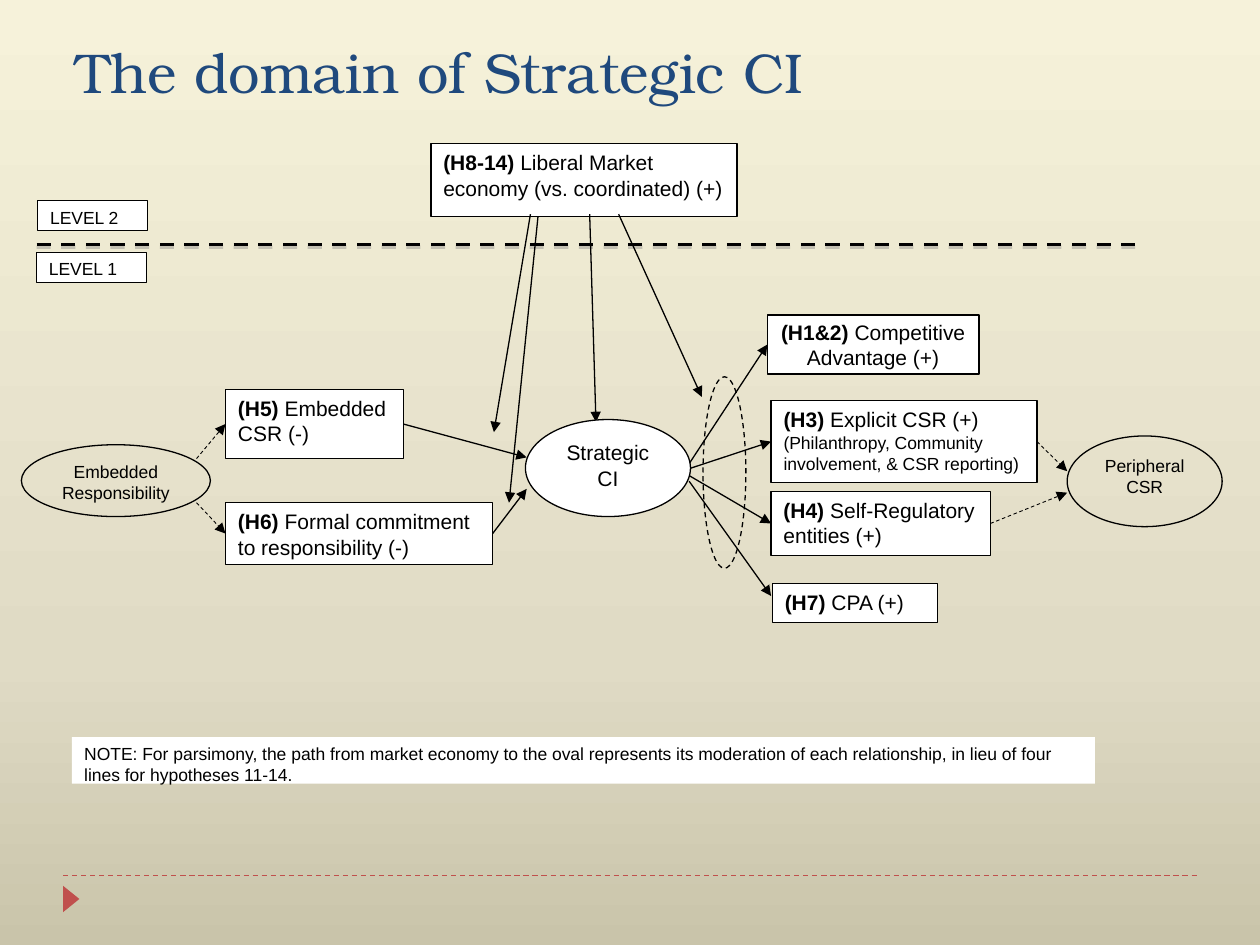
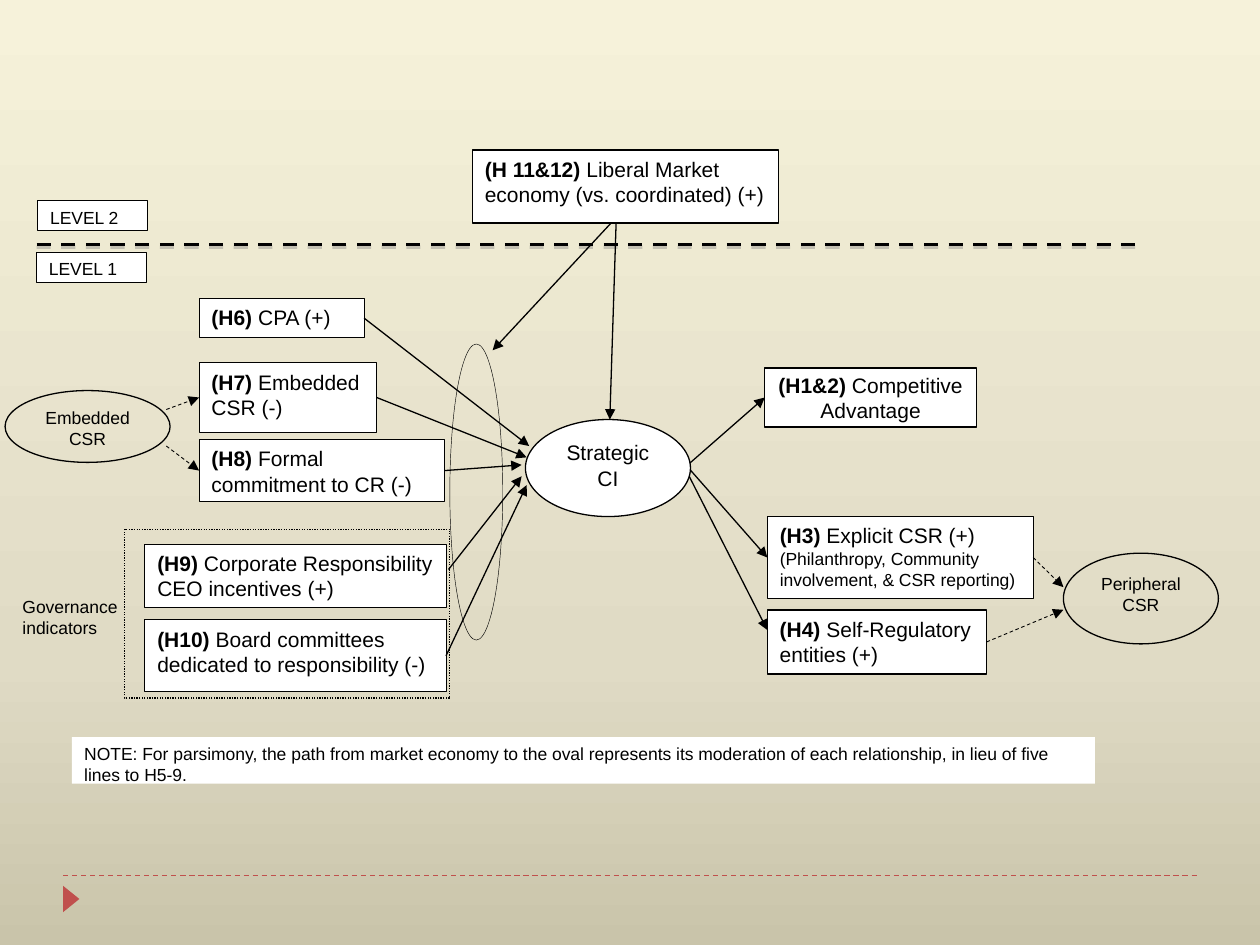
import copy
import dataclasses
import typing

import lxml.etree
import pptx
import pptx.dml.color
import pptx.enum.dml
import pptx.enum.shapes
import pptx.enum.text
import pptx.oxml.ns
import pptx.util

COLOURS = {
    "ink": "000000",
    "paper": "FFFFFF",
    "title": "1F497D",
    "accent": "C0504D",
    "shadow": "808080",
}
BACKGROUND_STOPS = [(0, "C9C4AA"), (0.3, "E0DBC5"), (1, "F6F2DA")]
BODY_FONT, TITLE_FONT = "Arial", "TeX Gyre Bonum"
SMALL, NORMAL, LARGE = 10, 12, 32

# The slide is a grid of 100 columns by 75 rows.
COLUMN = pptx.util.Inches(10) // 100
ROW = pptx.util.Inches(7.5) // 75

SHAPE = pptx.enum.shapes.MSO_SHAPE
DASH = pptx.enum.dml.MSO_LINE
ALIGN = pptx.enum.text.PP_ALIGN
ANCHOR = pptx.enum.text.MSO_ANCHOR
TOP, LEFT, BOTTOM, RIGHT = range(4)


@dataclasses.dataclass(frozen=True)
class Panel:
    """A rectangle or oval, measured in columns and rows."""
    left: float
    top: float
    width: float
    height: float
    text: str = ""
    tag: str = ""
    detail: str = ""
    size: int = NORMAL
    line: typing.Optional[float] = 0.5
    dash: typing.Optional[DASH] = None
    filled: bool = True
    oval: bool = False
    centred: bool = False
    middle: bool = False

    def at(self, left: float, top: float, **changes) -> "Panel":
        return dataclasses.replace(self, left=left, top=top, **changes)


class Point(typing.NamedTuple):
    column: float
    row: float


class Dock(typing.NamedTuple):
    """The middle of one side of a named panel."""
    panel: str
    side: int


class Arrow(typing.NamedTuple):
    start: typing.Union[Point, Dock]
    end: typing.Union[Point, Dock]
    dashed: bool = False


class Diagram(typing.NamedTuple):
    title: str
    note: str
    panels: dict[str, Panel]
    arrows: list[Arrow]


HUB = Panel(41.7, 33.3, 13.1, 7.7, "Strategic CI", line=0.75, oval=True, centred=True)
NOTE = Panel(5.7, 58.5, 81.2, 3.7, size=SMALL, line=None)
LEVELS = [
    Panel(2.9, 20, 8.7, 2.4, "LEVEL 1", size=SMALL),
    Panel(3, 15.9, 8.7, 2.4, "LEVEL 2", size=SMALL),
]
MARKET = Panel(34.2, 11.4, 24.3, 5.8, "Liberal Market economy (vs. coordinated) (+)",
               "(H8-14) ", line=0.75)
ADVANTAGE = Panel(60.9, 25, 16.8, 4.7, "Competitive Advantage (+)", "(H1&2) ",
                  line=0, centred=True, middle=True)
EXPLICIT = Panel(61.2, 31.8, 21.1, 6.5, "Explicit CSR (+)", "(H3) ",
                 "(Philanthropy, Community involvement, & CSR reporting)", line=0)
ENTITIES = Panel(61.2, 39, 17.4, 5.1, "Self-Regulatory entities (+)", "(H4) ", line=0)
CPA = Panel(61.3, 46.3, 13.1, 3.1, "CPA (+)", "(H7) ")
EMBEDDED = Panel(17.9, 30.9, 14.1, 5.5, "Embedded CSR (-)", "(H5) ")
COMMITMENT = Panel(17.9, 39.9, 21.2, 4.9, "Formal commitment to responsibility (-)", "(H6) ")
PERIPHERAL = Panel(84.7, 34.6, 12.3, 7.2, "Peripheral CSR", size=SMALL, line=0.75,
                   filled=False, oval=True, centred=True)
SOURCE = PERIPHERAL.at(1.7, 35.3, width=15, height=5.7, text="Embedded Responsibility")
MODERATED = Panel(55.8, 29.9, 3.4, 15.2, line=0.75, dash=DASH.DASH, filled=False, oval=True)
INCENTIVES = Panel(11.5, 43.2, 23.9, 5, "Corporate Responsibility CEO incentives (+)", "(H9) ")

NOTE_START = ("NOTE: For parsimony, the path from market economy to the oval "
              "represents its moderation of each relationship, in lieu of ")

DIAGRAMS = [
    Diagram(
        "The domain of Strategic CI",
        NOTE_START + "four lines for hypotheses 11-14.",
        {
            "moderated": MODERATED,
            "explicit": EXPLICIT,
            "cpa": CPA,
            "advantage": ADVANTAGE,
            "entities": ENTITIES,
            "embedded": EMBEDDED,
            "commitment": COMMITMENT,
            "market": MARKET,
            "source": SOURCE,
            "peripheral": PERIPHERAL,
        },
        [
            Arrow(Point(46.8, 17), Point(47.3, 33.5)),
            Arrow(Point(42.1, 17), Point(39.2, 34.3)),
            Arrow(Point(42.7, 17.2), Point(40.4, 39.9)),
            Arrow(Point(49.1, 17), Point(55.7, 31.5)),
            Arrow(Point(54.7, 36.8), Dock("advantage", LEFT)),
            Arrow(Point(54.7, 37.2), Dock("explicit", LEFT)),
            Arrow(Point(54.1, 37.4), Dock("entities", LEFT)),
            Arrow(Point(54.7, 38.2), Point(61.2, 47.3)),
            Arrow(Dock("embedded", RIGHT), Point(41.8, 36.3)),
            Arrow(Dock("commitment", RIGHT), Point(41.8, 38.8)),
            Arrow(Dock("entities", RIGHT), Point(84.7, 39.1), True),
            Arrow(Dock("explicit", RIGHT), Point(84.7, 37.4), True),
            Arrow(Point(15.6, 36.4), Dock("embedded", LEFT), True),
            Arrow(Point(15.6, 39.9), Dock("commitment", LEFT), True),
        ],
    ),
    Diagram(
        "",
        NOTE_START + "five lines to H5-9.",
        {
            "governance": Panel(9.9, 42, 25.8, 13.4, line=0.75, dash=DASH.ROUND_DOT,
                                filled=False),
            "governance label": Panel(0.8, 46.8, 9.8, 4.5, "Governance indicators",
                                      size=SMALL, line=None, filled=False),
            "moderated": MODERATED.at(35.7, 27.3, width=4.2, height=23.5, line=0.25, dash=None),
            "explicit": EXPLICIT.at(60.9, 41),
            "cpa": CPA.at(15.8, 23.7, tag="(H6) "),
            "advantage": ADVANTAGE.at(60.7, 29.2, text="Competitive Advantage"),
            "entities": ENTITIES.at(60.9, 48.4),
            "embedded": EMBEDDED.at(15.8, 28.8, tag="(H7) "),
            "commitment": COMMITMENT.at(15.8, 34.9, width=19.5, tag="(H8) ",
                                        text="Formal commitment to CR (-)"),
            "market": MARKET.at(37.5, 11.9, tag="(H 11&12) "),
            "source": SOURCE.at(0.4, 31, width=13.1, text="Embedded CSR"),
            "peripheral": PERIPHERAL.at(84.4, 43.9),
            "incentives": INCENTIVES,
            "committees": INCENTIVES.at(
                11.5, 49.2, height=5.7, tag="(H10) ",
                text="Board committees dedicated to responsibility (-)"),
        },
        [
            Arrow(Point(48.9, 17.7), Point(48.4, 33.3)),
            Arrow(Point(48.5, 17.7), Point(39.1, 27.8)),
            Arrow(Point(54.7, 36.8), Dock("advantage", LEFT)),
            Arrow(Point(54.7, 37.2), Dock("explicit", LEFT)),
            Arrow(Point(54.7, 37.8), Point(60.9, 50)),
            Arrow(Dock("cpa", RIGHT), Point(42, 35.4)),
            Arrow(Dock("embedded", RIGHT), Point(41.8, 36.3)),
            Arrow(Dock("commitment", RIGHT), Point(41.4, 36.9)),
            Arrow(Point(35.6, 45.2), Point(41.4, 37.8)),
            Arrow(Dock("committees", RIGHT), Point(41.8, 38.5)),
            Arrow(Dock("entities", RIGHT), Point(84.4, 48.4), True),
            Arrow(Dock("explicit", RIGHT), Point(84.4, 46.6), True),
            Arrow(Point(13.2, 32.5), Dock("embedded", LEFT), True),
            Arrow(Point(13.2, 35.4), Dock("commitment", LEFT), True),
        ],
    ),
]


def rgb(name: str) -> pptx.dml.color.RGBColor:
    return pptx.dml.color.RGBColor.from_string(COLOURS[name])


def grid(left: float, top: float, width: float, height: float) -> list[int]:
    return [round(left * COLUMN), round(top * ROW), round(width * COLUMN), round(height * ROW)]


def style_font(font, size: int, name: str = BODY_FONT, colour: str = "ink") -> None:
    font.size = pptx.util.Pt(size)
    font.name = name
    font.color.rgb = rgb(colour)


def style_line(line, width: float, colour: str = "ink", dash=None) -> None:
    line.color.rgb = rgb(colour)
    line.width = pptx.util.Pt(width)
    if dash is not None:
        line.dash_style = dash


def add_element(parent, tag: str, **attributes: str):
    return lxml.etree.SubElement(parent, pptx.oxml.ns.qn(tag), attributes)


def paint_background(master) -> None:
    """Give every page the same three-stop gradient, rising from the bottom."""
    fill = master.background.fill
    fill.gradient()
    fill.gradient_angle = 90
    stop_list = master.element.xpath(".//p:bg//a:gsLst")[0]
    stop_list.insert(1, copy.deepcopy(stop_list[0]))
    for stop, (position, colour) in zip(fill.gradient_stops, BACKGROUND_STOPS):
        stop.position = position
        stop.color.rgb = pptx.dml.color.RGBColor.from_string(colour)


def write_text(frame, panel: Panel) -> None:
    frame.word_wrap = True
    frame.vertical_anchor = ANCHOR.MIDDLE if panel.middle else ANCHOR.TOP
    para = frame.paragraphs[0]
    if panel.tag:
        tag = para.add_run()
        tag.text = panel.tag
        tag.font.bold = True
    para.add_run().text = panel.text
    lines = [(para, panel.size)]
    if panel.detail:
        detail = frame.add_paragraph()
        detail.text = panel.detail
        lines.append((detail, SMALL))
    for para, size in lines:
        para.alignment = ALIGN.CENTER if panel.centred else ALIGN.LEFT
        style_font(para.font, size)


def draw_panel(page, panel: Panel):
    kind = SHAPE.OVAL if panel.oval else SHAPE.RECTANGLE
    shape = page.shapes.add_shape(
        kind, *grid(panel.left, panel.top, panel.width, panel.height))
    shape.shadow.inherit = False
    if panel.filled:
        shape.fill.solid()
        shape.fill.fore_color.rgb = rgb("paper")
    else:
        shape.fill.background()
    if panel.line is None:
        shape.line.fill.background()
    else:
        style_line(shape.line, panel.line, dash=panel.dash)
    if panel.text:
        write_text(shape.text_frame, panel)
    return shape


def draw_line(page, start: Point, end: Point, width: float, colour: str = "ink", dash=None):
    """Draw a straight line; return it with its empty effect list."""
    line = page.shapes.add_connector(
        pptx.enum.shapes.MSO_CONNECTOR.STRAIGHT, *grid(*start, *end))
    style_line(line.line, width, colour, dash)
    effects = add_element(line._element.spPr, "a:effectLst")
    return line, effects


def find_point(place: typing.Union[Point, Dock], panels: dict[str, Panel]) -> Point:
    if isinstance(place, Point):
        return place
    panel = panels[place.panel]
    across, down = {TOP: (0.5, 0), LEFT: (0, 0.5), BOTTOM: (0.5, 1), RIGHT: (1, 0.5)}[place.side]
    return Point(panel.left + across * panel.width, panel.top + down * panel.height)


def draw_arrow(page, arrow: Arrow, panels: dict[str, Panel], shapes: dict) -> None:
    start, end = (find_point(place, panels) for place in (arrow.start, arrow.end))
    width, dash = (0.5, DASH.DASH) if arrow.dashed else (0.75, None)
    line, _ = draw_line(page, start, end, width, dash=dash)
    add_element(line.line._get_or_add_ln(), "a:tailEnd", type="triangle")
    for place, connect in ((arrow.start, line.begin_connect), (arrow.end, line.end_connect)):
        if isinstance(place, Dock):
            connect(shapes[place.panel], place.side)


def draw_footer(page) -> None:
    draw_line(page, Point(5, 69.5), Point(95, 69.5), 0.75, "accent", DASH.DASH)
    marker = page.shapes.add_shape(SHAPE.ISOSCELES_TRIANGLE, *grid(4.6, 70.7, 2.1, 1.3))
    marker.rotation = 90
    marker.shadow.inherit = False
    marker.fill.solid()
    marker.fill.fore_color.rgb = rgb("accent")
    marker.line.fill.background()


def draw_levels(page) -> None:
    """Separate the two levels with a shadowed dashed line and label them."""
    _, effects = draw_line(page, Point(2.9, 19.4), Point(90.1, 19.4), 2, dash=DASH.DASH)
    shadow = add_element(effects, "a:outerShdw", blurRad="0",
                         dist=str(pptx.util.Pt(1.6)), dir="5400000")
    colour = add_element(shadow, "a:srgbClr", val=COLOURS["shadow"])
    add_element(colour, "a:alpha", val="38000")
    for label in LEVELS:
        draw_panel(page, label)


def draw_title(page, title: str) -> None:
    frame = page.shapes.add_textbox(*grid(5, 2.5, 89.2, 8.2)).text_frame
    frame.word_wrap = True
    frame.text = title
    style_font(frame.paragraphs[0].font, LARGE, TITLE_FONT, "title")


def draw_diagram(page, diagram: Diagram) -> None:
    draw_footer(page)
    draw_panel(page, dataclasses.replace(NOTE, text=diagram.note))
    shapes = {name: draw_panel(page, panel) for name, panel in diagram.panels.items()}
    draw_levels(page)
    for arrow in diagram.arrows:
        draw_arrow(page, arrow, diagram.panels, shapes)
    draw_panel(page, HUB)
    if diagram.title:
        draw_title(page, diagram.title)


def main() -> None:
    deck = pptx.Presentation()
    deck.slide_width, deck.slide_height = 100 * COLUMN, 75 * ROW
    paint_background(deck.slide_master)
    for diagram in DIAGRAMS:
        draw_diagram(deck.slides.add_slide(deck.slide_layouts[6]), diagram)
    deck.save("out.pptx")


if __name__ == "__main__":
    main()
